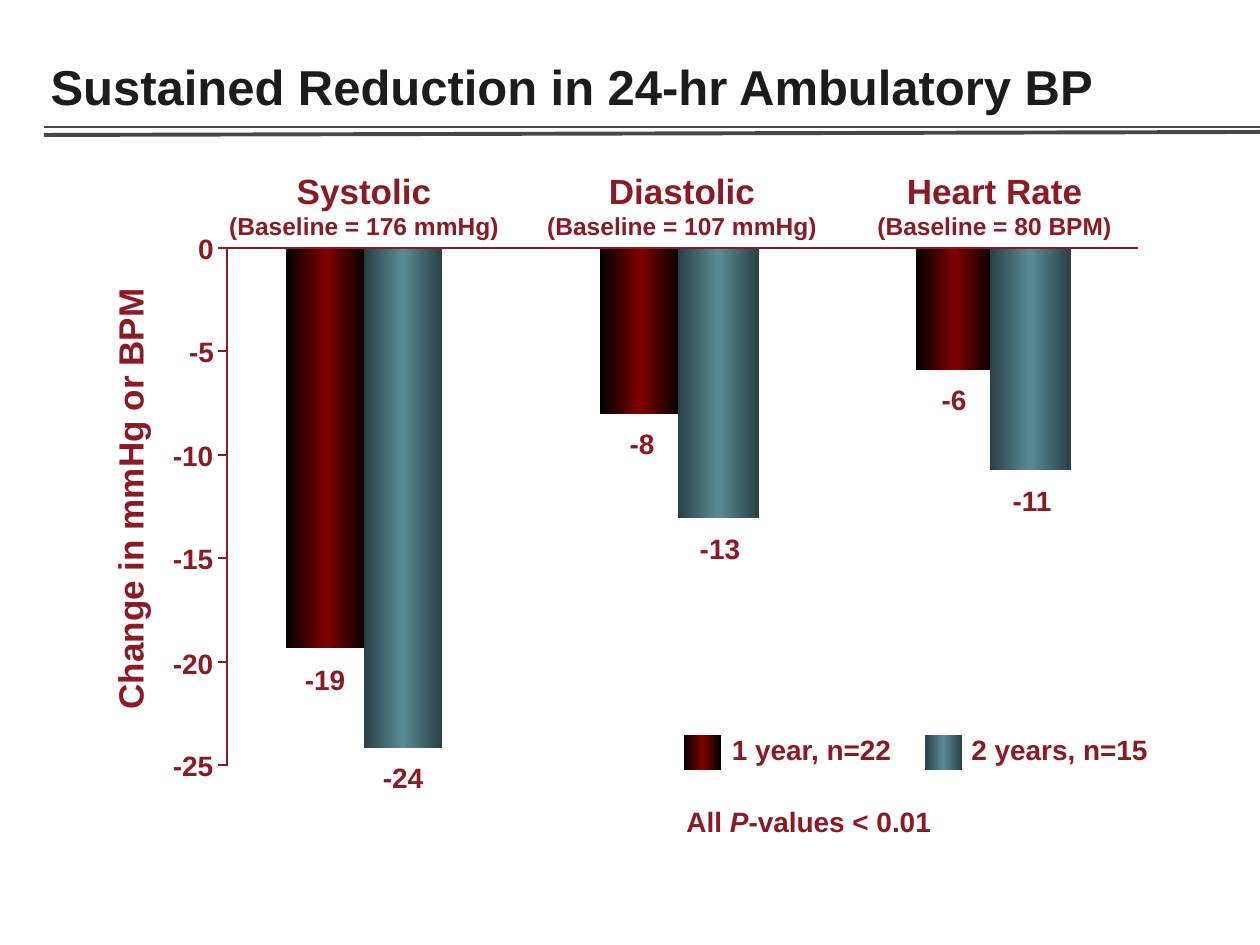
from dataclasses import dataclass

from lxml import etree
from pptx import Presentation
from pptx.dml.color import RGBColor
from pptx.enum.shapes import MSO_CONNECTOR, MSO_SHAPE
from pptx.enum.text import MSO_ANCHOR, MSO_AUTO_SIZE, PP_ALIGN
from pptx.oxml.ns import qn
from pptx.util import Emu, Pt

STRAIGHT = MSO_CONNECTOR.STRAIGHT
RECTANGLE = MSO_SHAPE.RECTANGLE
BOTTOM = MSO_ANCHOR.BOTTOM
FIXED_SIZE = MSO_AUTO_SIZE.NONE
LEFT, CENTER, RIGHT = PP_ALIGN.LEFT, PP_ALIGN.CENTER, PP_ALIGN.RIGHT
PX_PER_INCH = 126
TITLE_ONLY = 5


@dataclass(frozen=True)
class Theme:
    font: str = "Arial"
    title: str = "1C1C1C"
    rule: str = "474747"
    accent: str = "8C1A24"
    first_year: tuple = ("000000", "800000")
    second_year: tuple = ("294045", "598B95")
    title_size: int = 28
    heading_size: int = 20
    baseline_size: int = 14
    label_size: int = 16


THEME = Theme()

# Measures: name, baseline, heading centre, heading width
MEASURES = [
    ("Systolic", "(Baseline = 176 mmHg)", 364, 296),
    ("Diastolic", "(Baseline = 107 mmHg)", 682, 296),
    ("Heart Rate", "(Baseline = 80 BPM)", 994, 261),
]
# Legend: name, gradient, swatch left, text left and width
LEGEND = [
    ("1 year, n=22", THEME.first_year, 684, 729, 165),
    ("2 years, n=15", THEME.second_year, 925, 968, 183),
]
# Bars by series: value, left, width, height, label centre, label top
BARS = [
    (THEME.first_year, [("-19", 286, 81, 400, 325, 663),
                        ("-8", 600, 81, 166, 642, 427),
                        ("-6", 916, 78, 122, 954, 383)]),
    (THEME.second_year, [("-24", 364, 78, 500, 403, 761),
                         ("-13", 678, 81, 270, 720, 532),
                         ("-11", 990, 81, 222, 1032, 484)]),
]
AXIS_LEFT, AXIS_RIGHT = 227, 1138
ZERO_LINE, AXIS_HEIGHT = 248, 517
AXIS_LABELS = [("0", 16), ("-5", 25), ("-10", 42), ("-15", 42), ("-20", 42), ("-25", 42)]
TICK_LENGTH = 9
LABEL_RIGHT = 214
LABEL_HEIGHT = 34


def px(length):
    return Emu(round(length * 914400 / PX_PER_INCH))


def px_box(*lengths):
    return [px(length) for length in lengths]


def style_para(para, size, align, color=THEME.accent):
    para.alignment = align
    for span in para.runs:
        span.font.name = THEME.font
        span.font.size = Pt(size)
        span.font.bold = True
        span.font.color.rgb = RGBColor.from_string(color)


def add_title(page, text):
    title = page.shapes.title
    title.left, title.top, title.width, title.height = px_box(38, 33, 1222, 89)
    frame = title.text_frame
    frame.text = text
    frame.auto_size = FIXED_SIZE
    frame.vertical_anchor = BOTTOM
    style_para(frame.paragraphs[0], THEME.title_size, LEFT, THEME.title)


def add_line(page, ends, color=THEME.accent, weight=0.75):
    line = page.shapes.add_connector(STRAIGHT, *px_box(*ends))
    line.line.color.rgb = RGBColor.from_string(color)
    line.line.width = Pt(weight)
    etree.SubElement(line._element.spPr, qn("a:effectLst"))


def add_text(page, frame_px, lines, sizes, align=CENTER, margins=(0, 0), wrap=True):
    box = page.shapes.add_textbox(*px_box(*frame_px))
    frame = box.text_frame
    frame.word_wrap = wrap
    frame.margin_left = frame.margin_right = px(margins[0])
    frame.margin_top = frame.margin_bottom = px(margins[1])
    frame.text = "\n".join(lines)
    for para, size in zip(frame.paragraphs, sizes):
        style_para(para, size, align)
    return box


def add_label(page, text, left, top, width, wrap=False):
    add_text(page, (left, top, width, LABEL_HEIGHT), [text], [THEME.label_size], wrap=wrap)


def add_gradient_bar(page, frame_px, colors):
    """Rectangle shaded from edge colour to middle colour and back."""
    edge, middle = colors
    bar = page.shapes.add_shape(RECTANGLE, *px_box(*frame_px))
    bar.shadow.inherit = False
    bar.line.fill.background()
    bar.fill.gradient()
    bar.fill.gradient_angle = 0
    stops = bar._element.spPr.find(".//" + qn("a:gsLst"))
    for stop in list(stops):
        stops.remove(stop)
    for position, color in ((0, edge), (50000, middle), (100000, edge)):
        stop = etree.SubElement(stops, qn("a:gs"), pos=str(position))
        etree.SubElement(stop, qn("a:srgbClr"), val=color)


def add_bars(page):
    for colors, bars in BARS:
        for value, left, width, height, label_center, label_top in bars:
            add_gradient_bar(page, (left, ZERO_LINE, width, height), colors)
            add_label(page, value, label_center - 44, label_top, 88, wrap=True)


def add_axes(page):
    add_line(page, (AXIS_LEFT, ZERO_LINE, AXIS_LEFT, ZERO_LINE + AXIS_HEIGHT + 1))
    steps = len(AXIS_LABELS) - 1
    for index, (text, width) in enumerate(AXIS_LABELS):
        tick = ZERO_LINE + round(AXIS_HEIGHT * index / steps)
        add_line(page, (AXIS_LEFT - TICK_LENGTH, tick, AXIS_LEFT, tick))
        add_label(page, text, LABEL_RIGHT - width, tick - 16, width)
    add_line(page, (AXIS_LEFT, ZERO_LINE, AXIS_RIGHT, ZERO_LINE))


def add_significance_note(page):
    box = add_text(page, (616, 799, 328, 47), [""], [THEME.label_size], margins=(13, 6))
    para = box.text_frame.paragraphs[0]
    for text, italic in (("All ", False), ("P", True), ("-values < 0.01", False)):
        span = para.add_run()
        span.text = text
        span.font.italic = italic
    style_para(para, THEME.label_size, RIGHT)


def main():
    deck = Presentation()
    deck.slide_width, deck.slide_height = px_box(1260, 945)
    page = deck.slides.add_slide(deck.slide_layouts[TITLE_ONLY])

    # Title and double rule
    add_line(page, (44, 135, 1260, 132), THEME.rule, 2.25)
    add_line(page, (44, 127, 1260, 127), THEME.rule, 1.5)
    add_title(page, "Sustained Reduction in 24-hr Ambulatory BP")

    # Headings and axis title
    for name, baseline, center, width in MEASURES:
        add_text(page, (center - width // 2, 163, width, 84), [name, baseline],
                 [THEME.heading_size, THEME.baseline_size], margins=(13, 6), wrap=False)
    axis_title = add_text(page, (-123, 478, 505, 42), ["Change in mmHg or BPM"],
                          [THEME.heading_size])
    axis_title.rotation = 270

    # Bars and axes
    add_bars(page)
    add_axes(page)

    # Legend and note
    for name, colors, swatch_left, text_left, text_width in LEGEND:
        add_gradient_bar(page, (swatch_left, 735, 37, 35), colors)
        add_label(page, name, text_left, 733, text_width)
    add_significance_note(page)

    deck.save("out.pptx")


if __name__ == "__main__":
    main()
